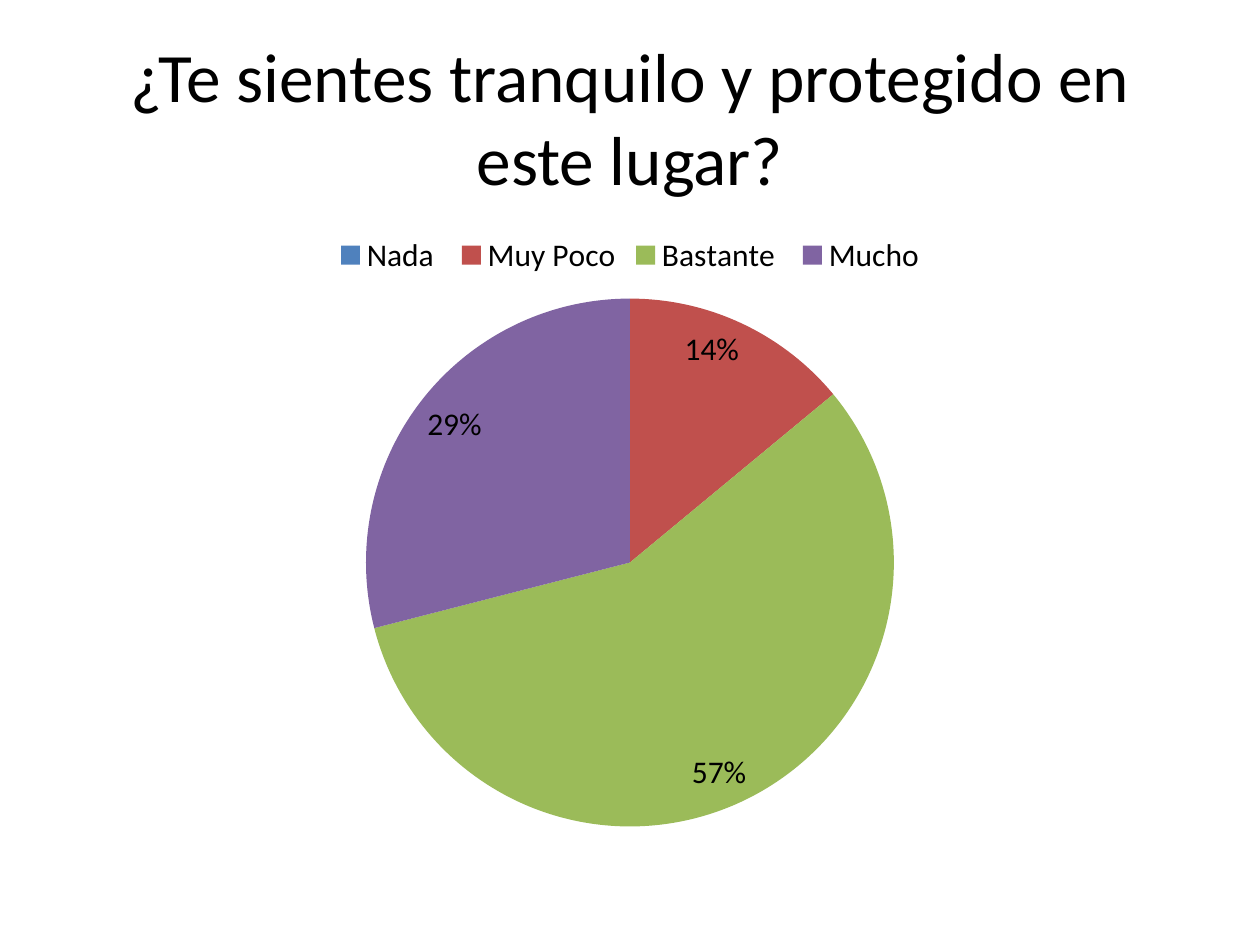
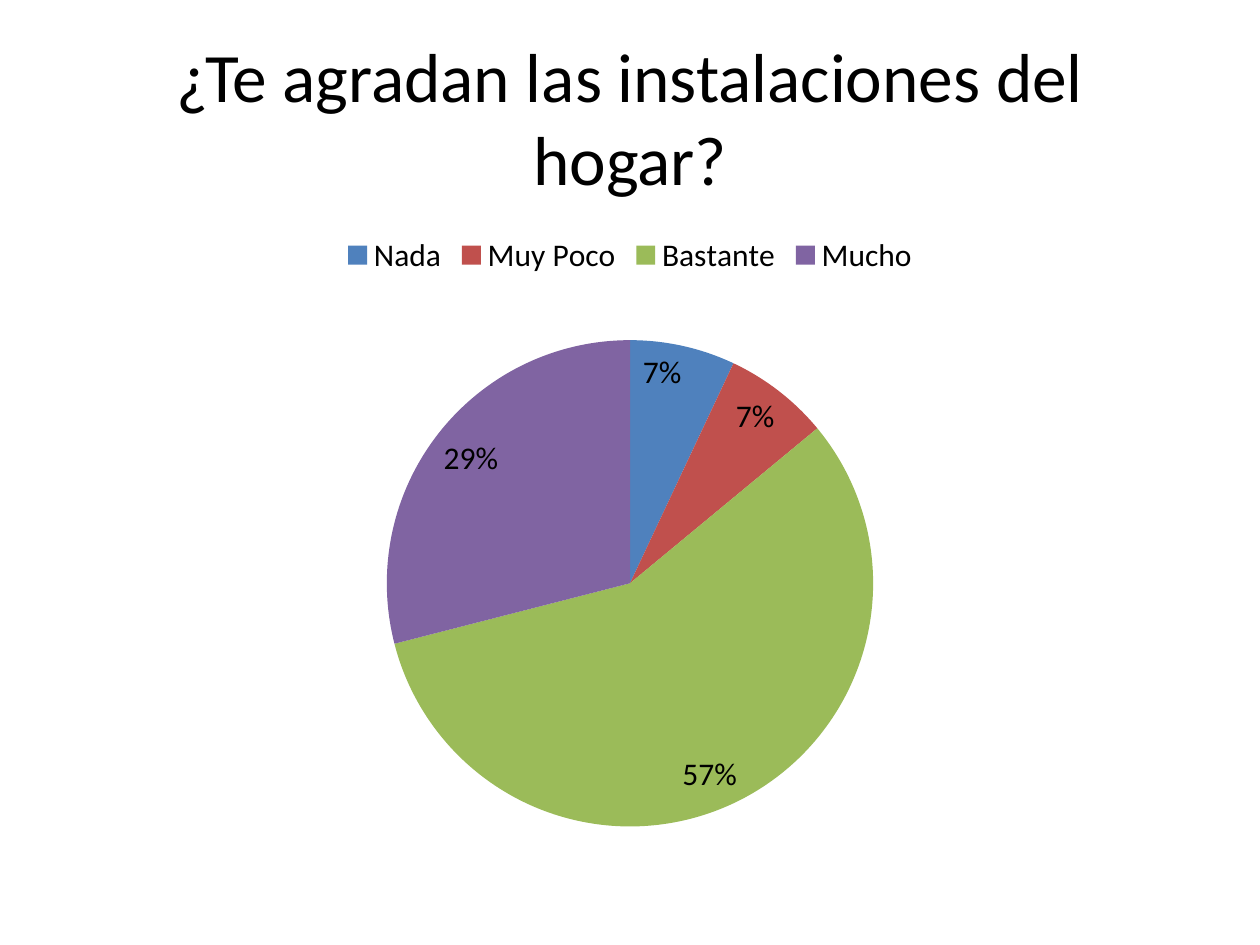
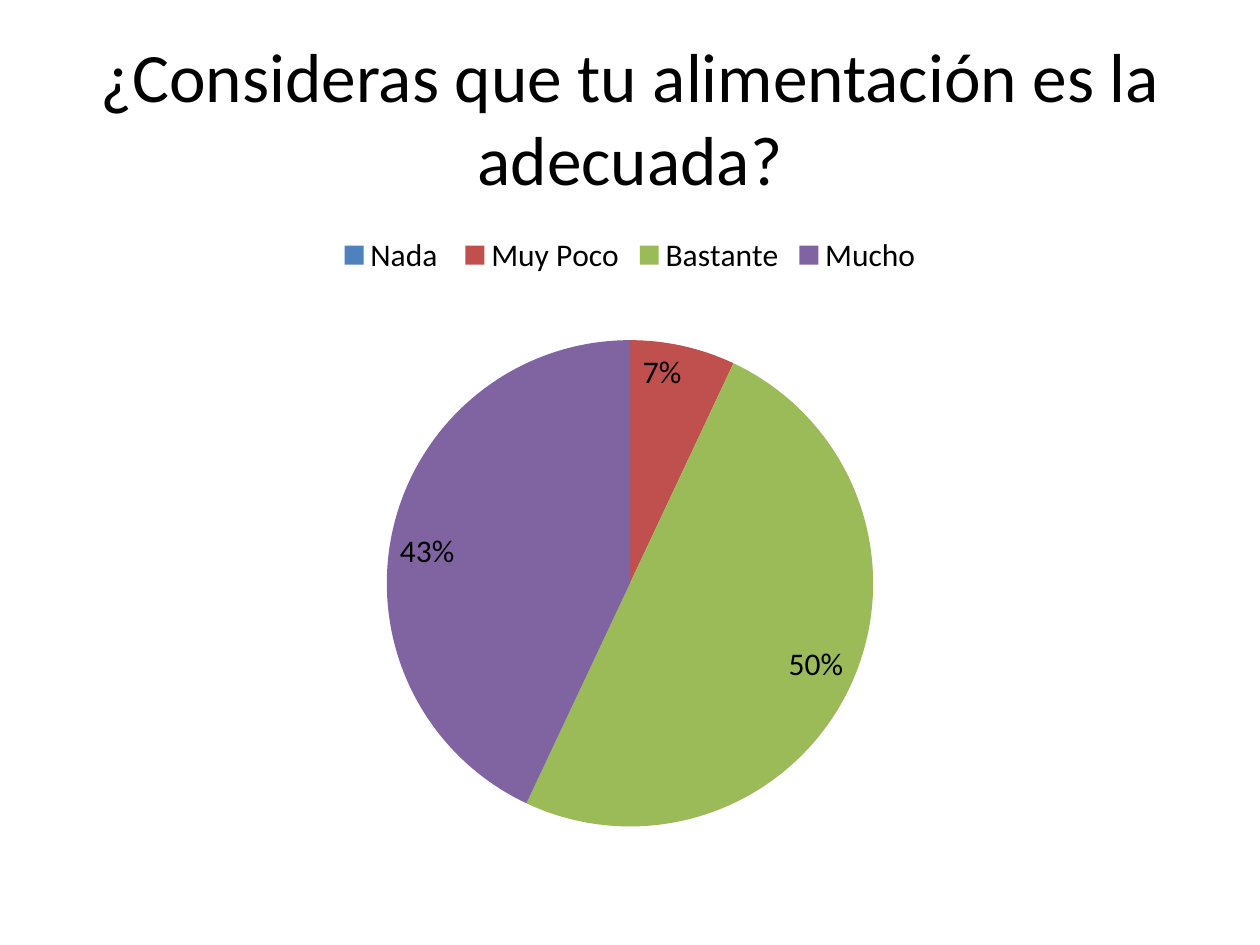
"""Build three survey slides, each with a question and a pie chart of its answers."""
from dataclasses import dataclass

import pptx
import pptx.chart.data
import pptx.dml.color
import pptx.enum.chart
import pptx.enum.text
import pptx.util
from lxml import etree
from pptx.util import Inches


@dataclass(frozen=True)
class Theme:
    font: str = "Calibri"
    ink: str = "000000"
    paper: str = "FFFFFF"
    slices: tuple = ("4F81BD", "C0504D", "9BBB59", "8064A2")
    title_size: float = 39.6
    chart_size: float = 18


THEME = Theme()
SURVEY = [
    {
        "question": "¿Te sientes tranquilo y protegido en este lugar?",
        "answers": [("Nada ", 0), ("Muy Poco", 14), ("Bastante ", 57), ("Mucho", 29)],
        "diameter": 4.19,
    },
    {
        "question": "¿Te agradan las instalaciones del hogar?",
        "answers": [("Nada", 7), ("Muy Poco", 7), ("Bastante", 57), ("Mucho", 29)],
        "diameter": 3.86,
    },
    {
        "question": "¿Consideras que tu alimentación es la adecuada?",
        "answers": [("Nada ", 0), ("Muy Poco", 7), ("Bastante", 50), ("Mucho", 43)],
        "diameter": 3.86,
    },
]
SLIDE_SIZE = (10, 7.5)
MARGIN = 0.5
CONTENT_WIDTH = SLIDE_SIZE[0] - 2 * MARGIN
TITLE_TOP, TITLE_HEIGHT = 0.3, 1.25
CHART_TOP, CHART_HEIGHT = 1.75, 4.95
PIE_BOTTOM = 4.81


def rgb(code):
    return pptx.dml.color.RGBColor.from_string(code)


def style_font(font, size):
    font.name = THEME.font
    font.size = pptx.util.Pt(size)
    font.color.rgb = rgb(THEME.ink)


def add_question(slide, question):
    title = slide.shapes.title
    title.left, title.top = Inches(MARGIN), Inches(TITLE_TOP)
    title.width, title.height = Inches(CONTENT_WIDTH), Inches(TITLE_HEIGHT)
    frame = title.text_frame
    frame.word_wrap = True
    frame.auto_size = pptx.enum.text.MSO_AUTO_SIZE.NONE
    frame.vertical_anchor = pptx.enum.text.MSO_ANCHOR.MIDDLE
    paragraph = frame.paragraphs[0]
    paragraph.alignment = pptx.enum.text.PP_ALIGN.CENTER
    wording = paragraph.add_run()
    wording.text = question
    style_font(wording.font, THEME.title_size)


def place_pie(chart, diameter):
    plot_area = chart.element.chart.plotArea
    namespace = etree.QName(plot_area).namespace
    for old in plot_area.findall(f"{{{namespace}}}layout"):
        plot_area.remove(old)
    layout = etree.Element(f"{{{namespace}}}layout")
    plot_area.insert(0, layout)
    manual = etree.SubElement(layout, f"{{{namespace}}}manualLayout")
    settings = {
        "layoutTarget": "inner",
        "xMode": "edge",
        "yMode": "edge",
        "x": (CONTENT_WIDTH - diameter) / 2 / CONTENT_WIDTH,
        "y": (PIE_BOTTOM - diameter) / CHART_HEIGHT,
        "w": diameter / CONTENT_WIDTH,
        "h": diameter / CHART_HEIGHT,
    }
    for tag, value in settings.items():
        etree.SubElement(manual, f"{{{namespace}}}{tag}").set("val", str(value))


def add_answers(slide, answers, diameter):
    labels, shares = zip(*answers)
    answer_data = pptx.chart.data.CategoryChartData()
    answer_data.categories = labels
    answer_data.add_series("Series 1", shares)
    chart = slide.shapes.add_chart(
        pptx.enum.chart.XL_CHART_TYPE.PIE, Inches(MARGIN), Inches(CHART_TOP),
        Inches(CONTENT_WIDTH), Inches(CHART_HEIGHT), answer_data).chart
    chart.has_title = False
    style_font(chart.font, THEME.chart_size)
    chart.has_legend = True
    chart.legend.position = pptx.enum.chart.XL_LEGEND_POSITION.TOP
    chart.legend.include_in_layout = False

    pie = chart.plots[0]
    pie.vary_by_categories = True
    for index, color in enumerate(THEME.slices):
        fill = pie.series[0].points[index].format.fill
        fill.solid()
        fill.fore_color.rgb = rgb(color)
    pie.has_data_labels = True
    percents = pie.data_labels
    percents.show_percentage = True
    percents.show_value = False
    percents.number_format = "0%;;;"
    percents.number_format_is_linked = False
    percents.position = pptx.enum.chart.XL_LABEL_POSITION.INSIDE_END
    style_font(percents.font, THEME.chart_size)
    place_pie(chart, diameter)


def main():
    deck = pptx.Presentation()
    deck.slide_width, deck.slide_height = map(Inches, SLIDE_SIZE)
    background = deck.slide_master.background.fill
    background.solid()
    background.fore_color.rgb = rgb(THEME.paper)
    for item in SURVEY:
        slide = deck.slides.add_slide(deck.slide_layouts[5])
        add_question(slide, item["question"])
        add_answers(slide, item["answers"], item["diameter"])
    deck.save("out.pptx")


if __name__ == "__main__":
    main()
